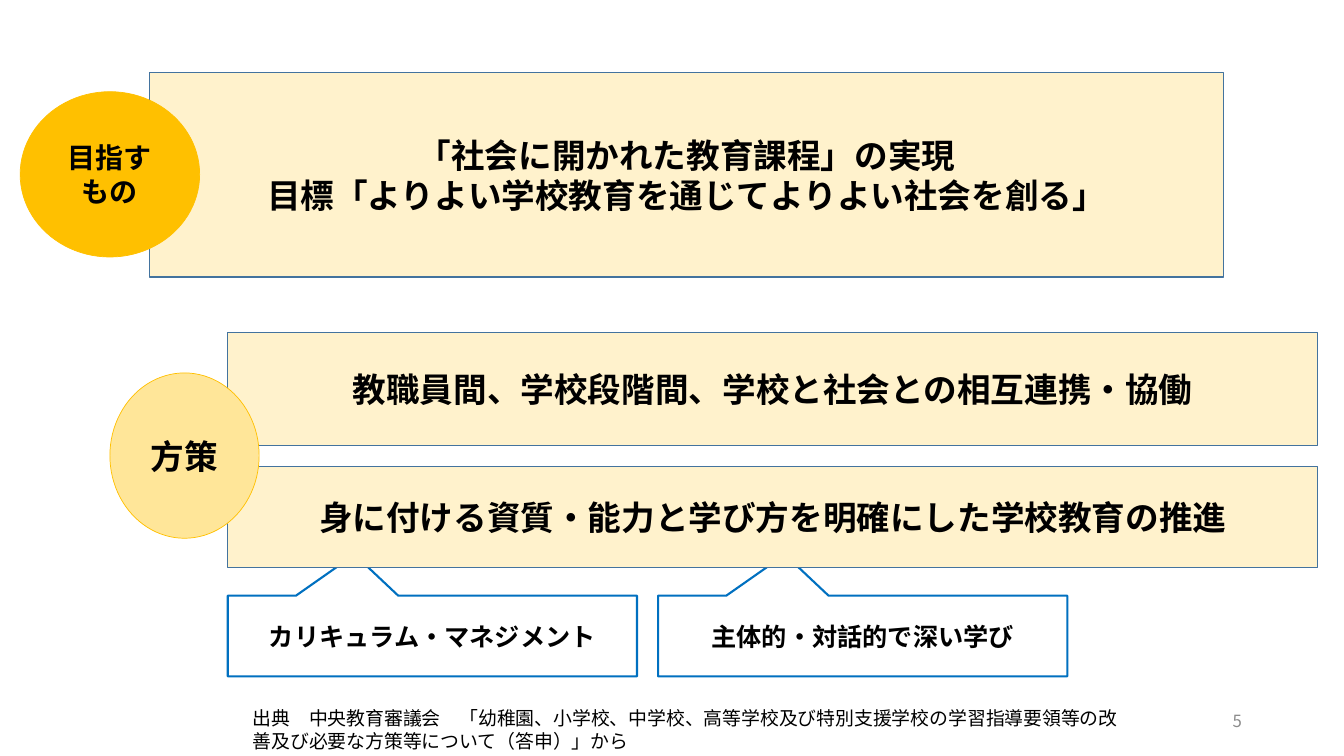
from lxml.etree import SubElement
from pptx import Presentation
from pptx.dml.color import RGBColor as Rgb
from pptx.enum.shapes import MSO_SHAPE as Kind
from pptx.enum.text import MSO_ANCHOR as Anchor, PP_ALIGN as Align
from pptx.oxml.ns import qn
from pptx.util import Pt

FACE = "Noto Sans CJK JP"
HUES = {
    "cream": "FFF2CC", "gold": "FFC000", "sand": "FFE699", "white": "FFFFFF",
    "steel": "43739E", "blue": "0070C0", "ink": "000000", "gray": "8C8C8C",
}


def hue(name):
    """Return the named colour."""
    return Rgb.from_string(HUES[name])


def write(shape, lines, size, align=Align.CENTER, bold=True, color="ink", anchor=Anchor.MIDDLE):
    """Fill a shape with styled lines of text."""
    frame = shape.text_frame
    frame.word_wrap = True
    frame.vertical_anchor = anchor
    frame.text = "\n".join(lines)
    for para in frame.paragraphs:
        para.alignment = align
        font = para.font
        font.size, font.bold, font.name = Pt(size), bold, FACE
        font.color.rgb = hue(color)
        SubElement(para._p.pPr.find(qn("a:defRPr")), qn("a:ea"), typeface=FACE)


def block(slide, kind, box, fill, line, width, lines, size):
    """Draw one filled, outlined shape with centred text."""
    shape = slide.shapes.add_shape(kind, *map(Pt, box))
    shape.shadow.inherit = False
    shape.fill.solid()
    shape.fill.fore_color.rgb = hue(fill)
    shape.line.color.rgb = hue(line)
    shape.line.width = Pt(width)
    write(shape, lines, size)
    return shape


def panel(slide, box, lines):
    """Draw a cream panel."""
    block(slide, Kind.RECTANGLE, box, "cream", "steel", 1, lines, 24)


def badge(slide, box, fill, label, size):
    """Draw a round label."""
    block(slide, Kind.OVAL, box, fill, "gold", 0.5, [label], size)


def aim(slide, x, y, w, h):
    """Place the goal panel and its badge."""
    panel(slide, (x + 92.2, y, w - 92.2, h),
          ["「社会に開かれた教育課程」の実現", "目標「よりよい学校教育を通じてよりよい社会を創る」"])
    badge(slide, (x, y + 13.7, 128.2, 118.1), "gold", "目指すもの", 20)


def plan(slide, x, y, w, h):
    """Place the measures: two panels, two callouts and a badge."""
    left, wide = x + 84.2, w - 84.2
    panel(slide, (left, y, wide, 80.6), ["教職員間、学校段階間、学校と社会との相互連携・協働"])
    for i, label in enumerate(["カリキュラム・マネジメント", "主体的・対話的で深い学び"]):
        box = (left + i * 307.4, y + h - 57.6, 292.3, 57.6)
        call = block(slide, Kind.RECTANGULAR_CALLOUT, box, "white", "blue", 1.5, [label], 18)
        call.adjustments[0], call.adjustments[1] = -0.19, -1.01
    panel(slide, (left, y + 95.8, wide, 72), ["身に付ける資質・能力と学び方を明確にした学校教育の推進"])
    badge(slide, (x, y + 28.8, 106.6, 118.1), "sand", "方策", 24)


def foot(slide, x, y, w, h):
    """Place the source note and the page number."""
    note = slide.shapes.add_textbox(Pt(x), Pt(y), Pt(643.7), Pt(h))
    write(note, ["出典　中央教育審議会　「幼稚園、小学校、中学校、高等学校及び特別支援学校の"
                 "学習指導要領等の改善及び必要な方策等について（答申）」から"],
          13.5, Align.LEFT, False, anchor=Anchor.TOP)
    page = slide.shapes.add_textbox(Pt(x + w - 216), Pt(y - 0.7), Pt(216), Pt(28.8))
    write(page, ["5"], 12, Align.RIGHT, False, "gray")


def main():
    """Build the slide and save it."""
    deck = Presentation()
    deck.slide_width, deck.slide_height = Pt(960), Pt(540)
    slide = deck.slides.add_slide(deck.slide_layouts[6])
    aim(slide, 14.4, 51.8, 859.7, 146.2)
    plan(slide, 78.5, 237.6, 862.5, 245.5)
    foot(slide, 173.5, 501.1, 720.7, 38.9)
    deck.save("out.pptx")


if __name__ == "__main__":
    main()
